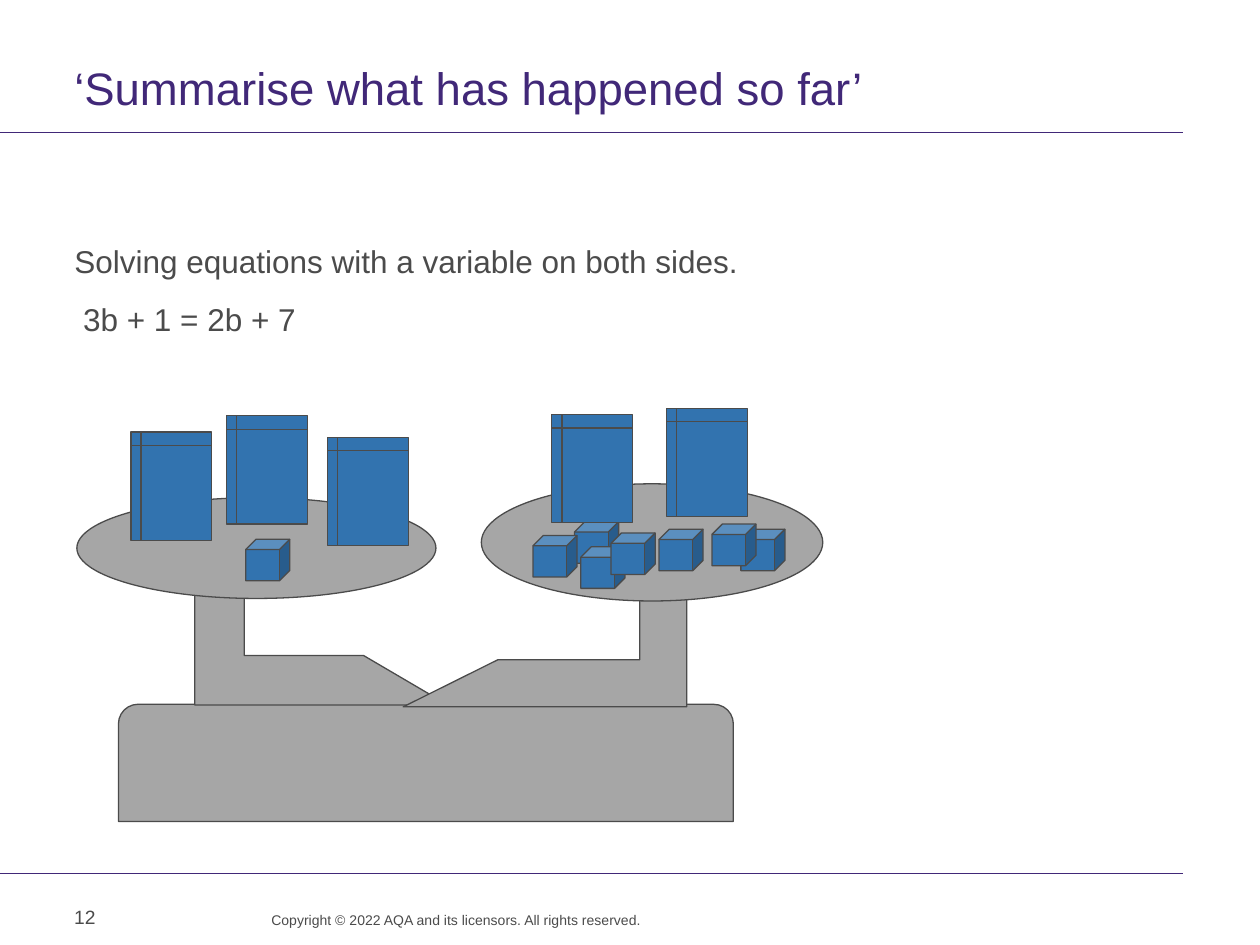
from lxml.etree import SubElement
from pptx import Presentation
from pptx.dml.color import RGBColor
from pptx.enum.shapes import MSO_CONNECTOR, MSO_SHAPE
from pptx.enum.text import MSO_ANCHOR, PP_ALIGN
from pptx.oxml.ns import qn
from pptx.util import Inches, Pt

PURPLE, DARK, GREY, BLUE = "412878", "4B4B4B", "A6A6A6", "3273AF"


def color(code):
    return RGBColor.from_string(code)


def apply(target, values):
    for name, value in values.items():
        setattr(target, name, value)


def add_rule(slide, box):
    left, top, width = map(Inches, box)
    line = slide.shapes.add_connector(
        MSO_CONNECTOR.STRAIGHT, left, top, left + width, top)
    line.line.color.rgb = color(PURPLE)
    line.line.width = Pt(0.6)
    SubElement(line._element.spPr, qn("a:effectLst"))


def add_text(slide, box, text, size, tint=DARK, inset=(0, 0, 0.1, 0),
             anchor=MSO_ANCHOR.TOP, **para):
    frame = slide.shapes.add_textbox(*map(Inches, box)).text_frame
    left, top, right, bottom = map(Inches, inset)
    apply(frame, {"word_wrap": True, "vertical_anchor": anchor,
                  "margin_left": left, "margin_top": top,
                  "margin_right": right, "margin_bottom": bottom})
    item = frame.paragraphs[0]
    item.text = text
    apply(item, para)
    apply(item.font, {"name": "Arial", "size": Pt(size)})
    item.font.color.rgb = color(tint)


def add_part(slide, kind, box, fill, turn=0):
    part = slide.shapes.add_shape(kind, *map(Inches, box))
    part.rotation = turn
    part.shadow.inherit = False
    part.fill.solid()
    part.fill.fore_color.rgb = color(fill)
    part.line.color.rgb = color(DARK)
    part.line.width = Pt(0.75)


def add_header(slide, box):
    left, top, width, height = box
    add_text(slide, box, "‘Summarise what has happened so far’", 26, PURPLE,
             inset=(0, 0.39, 0.1, 0), line_spacing=Pt(28))
    add_rule(slide, (0, top + height + 0.02, left + width))


def add_body(slide, box):
    left, top, width, height = box
    inset = (0, 0.03, 0.1, 0)
    add_text(slide, (left, top, width, 0.4),
             "Solving equations with a variable on both sides.", 18, inset=inset)
    add_text(slide, (left + 0.07, top + 0.46, 3.23, 0.4),
             "3b + 1 = 2b + 7", 18, inset=inset)


def add_footer(slide, box):
    left, top, width, height = box
    add_rule(slide, (left, top, width))
    add_text(slide, (left + 1.67, top + 0.3, 3.42, 0.26),
             "Copyright © 2022 AQA and its licensors. All rights reserved.", 8,
             inset=(0, 0, 0, 0), alignment=PP_ALIGN.RIGHT, line_spacing=Pt(10))
    add_text(slide, (left + 0.49, top + 0.15, 0.76, 0.4), "12", 11,
             inset=(0.1, 0.05, 0.1, 0.05), anchor=MSO_ANCHOR.MIDDLE)


def add_stand(slide, box):
    left, top, width, height = box
    add_part(slide, MSO_SHAPE.ROUND_2_SAME_RECTANGLE,
             (left, top + height - 0.93, width, 0.93), GREY)
    arms = [(1.02, -0.42, 1.18, 2.01, 270), (2.26, 0.07, 2.25, 1.12, 180)]
    for x, y, wide, high, turn in arms:
        add_part(slide, MSO_SHAPE.HALF_FRAME,
                 (left + x, top + y, wide, high), GREY, turn)


def add_pan(slide, box, cubes, books):
    left, top, width, height = box
    add_part(slide, MSO_SHAPE.OVAL, box, GREY)
    loads = [(MSO_SHAPE.CUBE, (0.35, 0.33), cubes),
             (MSO_SHAPE.FLOWCHART_INTERNAL_STORAGE, (0.64, 0.86), books)]
    for kind, size, spots in loads:
        for x, y in spots:
            add_part(slide, kind, (left + x, top + y, *size), BLUE)


def main():
    deck = Presentation()
    apply(deck, {"slide_width": Inches(10), "slide_height": Inches(7.5)})
    slide = deck.slides.add_slide(deck.slide_layouts[6])
    add_header(slide, (0.59, 0.13, 8.8, 0.9))
    add_body(slide, (0.59, 1.89, 8.8, 4.82))
    add_footer(slide, (0, 6.93, 9.39, 0.57))
    add_stand(slide, (0.94, 4.42, 4.88, 2.1))
    add_pan(slide, (0.61, 3.95, 2.85, 0.8), [(1.34, 0.33)],
            [(0.43, -0.52), (1.99, -0.48), (1.19, -0.65)])
    add_pan(slide, (3.82, 3.84, 2.71, 0.93),
            [(0.74, 0.3), (0.41, 0.41), (0.79, 0.5), (2.06, 0.36),
             (1.03, 0.39), (1.83, 0.32), (1.41, 0.36)],
            [(0.56, -0.55), (1.47, -0.6)])
    deck.save("out.pptx")


if __name__ == "__main__":
    main()
